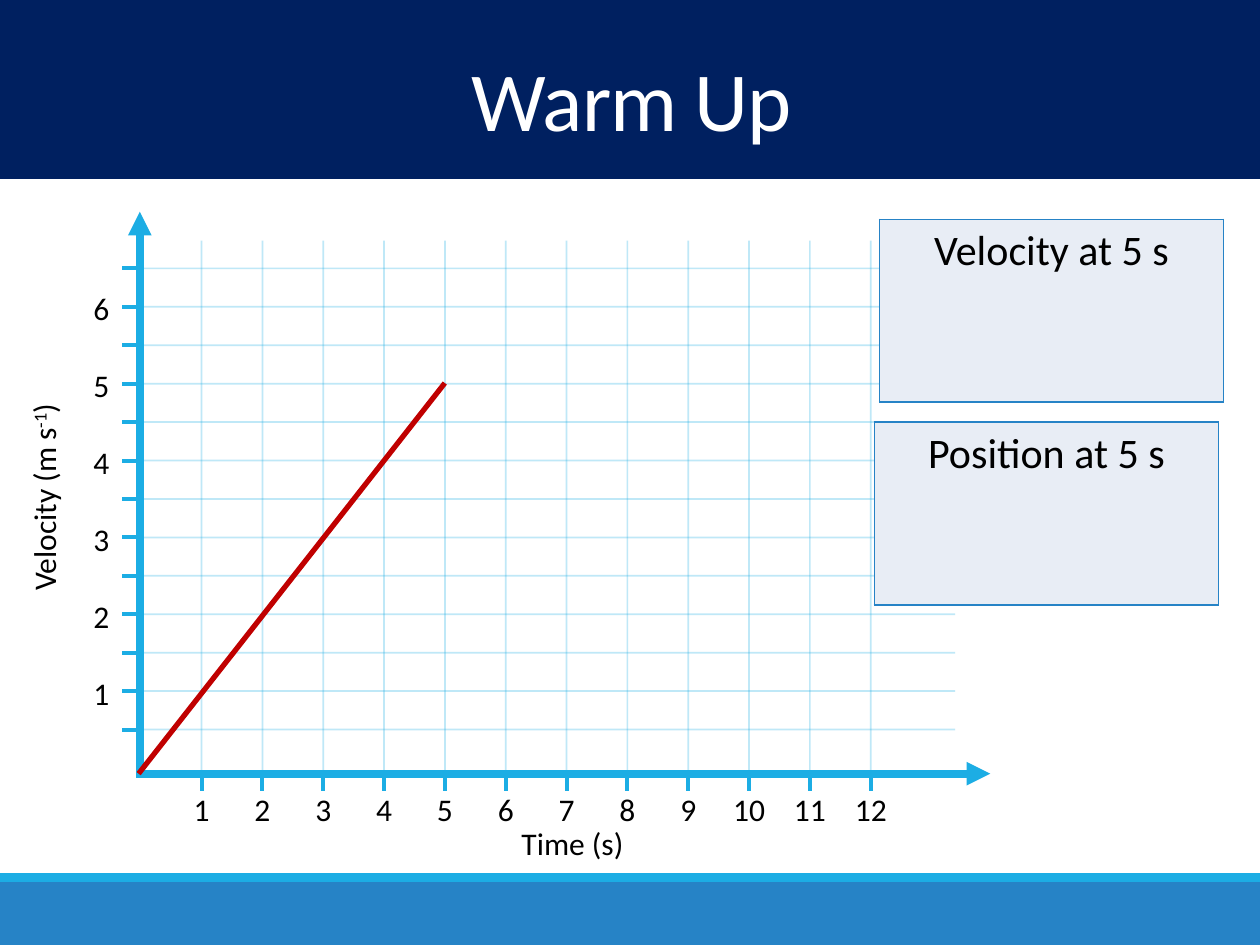
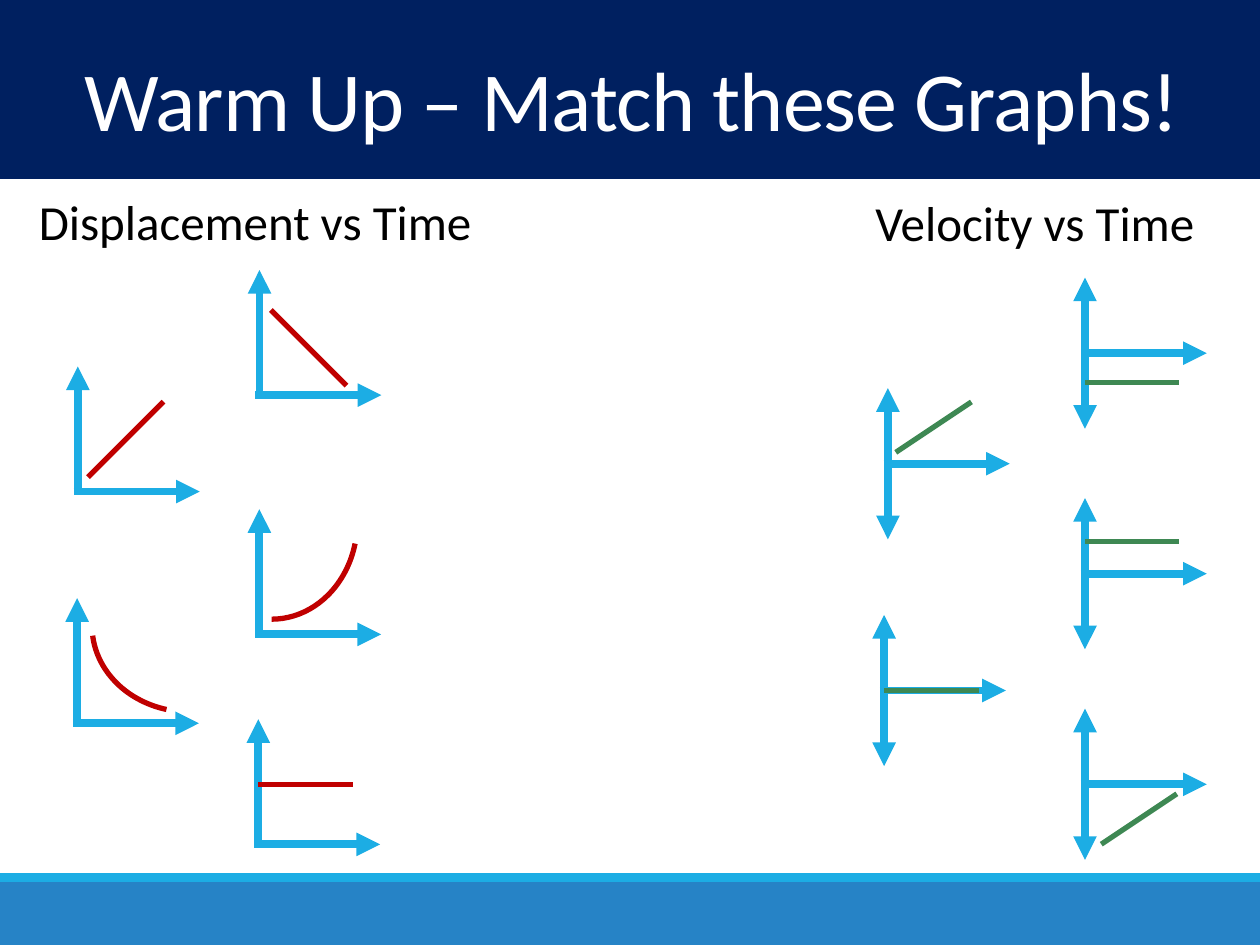
import pptx
import pptx.dml.color
import pptx.enum.shapes
import pptx.enum.text
import pptx.oxml.ns
import pptx.util
from lxml import etree

Pt = pptx.util.Pt
SHAPE = pptx.enum.shapes.MSO_SHAPE
ALIGN = pptx.enum.text.PP_ALIGN
ANCHOR = pptx.enum.text.MSO_ANCHOR
qn = pptx.oxml.ns.qn

NAVY, BLUE, SKY = "002060", "2683C6", "1CADE4"
RED, GREEN, PALE = "C00000", "3E8853", "E8EDF5"
BLACK, WHITE = "000000", "FFFFFF"
FONT = "Calibri"

ORIGIN_X, ORIGIN_Y = 79.9, 442.1
FIRST_SECOND_X, SECOND_STEP = 115.2, 34.76
FIRST_HALF_Y, HALF_STEP = 416.9, 21.96
SECONDS, HALF_METRES = 12, 13


def colour(hex_code):
    return pptx.dml.color.RGBColor.from_string(hex_code)


def add_run(paragraph, words, size, ink=BLACK):
    run = paragraph.add_run()
    run.text = words
    run.font.name = FONT
    run.font.size = Pt(size)
    run.font.color.rgb = colour(ink)
    return run


def add_label(slide, words, left, top, width, height, size=18, ink=BLACK,
              align=ALIGN.LEFT, wrap=True):
    label = slide.shapes.add_textbox(Pt(left), Pt(top), Pt(width), Pt(height))
    label.text_frame.word_wrap = wrap
    paragraph = label.text_frame.paragraphs[0]
    paragraph.alignment = align
    add_run(paragraph, words, size, ink)
    return label


def add_band(slide, top, height, fill):
    band = slide.shapes.add_shape(SHAPE.RECTANGLE, 0, Pt(top), Pt(720), Pt(height))
    band.shadow.inherit = False
    band.fill.solid()
    band.fill.fore_color.rgb = colour(fill)
    band.line.fill.background()


def add_line(slide, start, end, ink, weight, head=False, tail=False, alpha=None):
    line = slide.shapes.add_connector(
        pptx.enum.shapes.MSO_CONNECTOR.STRAIGHT, *map(Pt, start + end))
    line.line.color.rgb = colour(ink)
    line.line.width = Pt(weight)
    stroke = line.line._get_or_add_ln()
    if alpha:
        tint = stroke.find(".//" + qn("a:srgbClr"))
        etree.SubElement(tint, qn("a:alpha"), val=str(alpha * 1000))
    for end_name, wanted in (("a:headEnd", head), ("a:tailEnd", tail)):
        if wanted:
            etree.SubElement(stroke, qn(end_name), type="triangle")
    etree.SubElement(line._element.spPr, qn("a:effectLst"))


def add_axis(slide, start, end, both_ways=False):
    add_line(slide, start, end, SKY, 4.5, head=both_ways, tail=True)


def add_arc(slide, left, top, rotation, start, end):
    arc = slide.shapes.add_shape(SHAPE.ARC, Pt(left), Pt(top), Pt(111.6), Pt(97.9))
    arc.shadow.inherit = False
    arc.rotation = rotation
    arc.adjustments[0] = start
    arc.adjustments[1] = end
    arc.fill.background()
    arc.line.color.rgb = colour(RED)
    arc.line.width = Pt(3)


def add_answer_box(slide, question, left, top):
    frame = slide.shapes.add_table(1, 1, Pt(left), Pt(top), Pt(196.6), Pt(104.4))
    answer = frame.table.cell(0, 0)
    paragraph = answer.text_frame.paragraphs[0]
    paragraph.alignment = ALIGN.CENTER
    add_run(paragraph, question, 24)
    borders = answer._tc.get_or_add_tcPr()
    for side in ("a:lnL", "a:lnR", "a:lnT", "a:lnB"):
        border = etree.SubElement(borders, qn(side), w=str(Pt(1)))
        paint = etree.SubElement(border, qn("a:solidFill"))
        etree.SubElement(paint, qn("a:srgbClr"), val=BLUE)
    answer.fill.solid()
    answer.fill.fore_color.rgb = colour(PALE)


def add_titled_slide(deck, words):
    slide = deck.slides.add_slide(deck.slide_layouts[6])
    add_band(slide, 504, 36, BLUE)
    add_band(slide, 499, 5, SKY)
    add_band(slide, 0, 102.2, NAVY)
    title = add_label(slide, words, 2.2, 30.2, 717.8, 60.5, 48, WHITE, ALIGN.CENTER)
    title.text_frame.vertical_anchor = ANCHOR.MIDDLE
    paragraph = title.text_frame.paragraphs[0]
    paragraph.line_spacing = 0.85
    paragraph.runs[0].font._element.set("spc", "-50")
    return slide


def add_velocity_graph(slide):
    add_axis(slide, (ORIGIN_X, 442.8), (ORIGIN_X, 121))
    add_axis(slide, (77.8, ORIGIN_Y), (565.9, ORIGIN_Y))

    velocity = add_label(slide, "Velocity (m s", -72, 233.3, 193.7, 28.8)
    velocity.rotation = 270
    unit = velocity.text_frame.paragraphs[0]
    add_run(unit, "-1", 18).font._element.set("baseline", "30000")
    add_run(unit, ")", 18)
    add_label(slide, "Time (s)", 290.9, 467.3, 80.6, 28.8)

    for half in range(HALF_METRES):
        y = FIRST_HALF_Y - half * HALF_STEP
        add_line(slide, (ORIGIN_X, y), (69.8, y), SKY, 2.25)
        add_line(slide, (79.2, y), (545.8, y), SKY, 1, alpha=27)
        if half % 2:
            add_label(slide, str((half + 1) // 2), 46, y - 13.5, 23.8, 28.8,
                      align=ALIGN.CENTER, wrap=False)
    for second in range(1, SECONDS + 1):
        x = FIRST_SECOND_X + (second - 1) * SECOND_STEP
        add_line(slide, (x, 452), (x, 442.9), SKY, 2.25)
        add_line(slide, (x, 137.5), (x, ORIGIN_Y), SKY, 1, alpha=27)
        add_label(slide, str(second), x - 17.3, 447.7, 34.6, 28.8,
                  align=ALIGN.CENTER, wrap=False)


def add_motion(slide, corner, start, end, ink):
    x, y = corner
    add_line(slide, (x + start[0], y + start[1]), (x + end[0], y + end[1]), ink, 3)


def add_small_axes(slide, corner, both_ways):
    x, y = corner
    reach_down, reach_up = (43.2, 43.2) if both_ways else (0.5, 71.5)
    add_axis(slide, (x, y + reach_down), (x, y - reach_up), both_ways)
    add_axis(slide, (x - 2.4, y), (x + 69.6, y))


def build_warm_up(deck):
    slide = add_titled_slide(deck, "Warm Up")
    add_velocity_graph(slide)
    add_answer_box(slide, "Velocity at 5 s", 502.6, 125.3)
    add_line(slide, (79.2, ORIGIN_Y), (254.2, 218.9), RED, 3)
    add_answer_box(slide, "Position at 5 s", 499.7, 241.2)


def build_matching(deck):
    slide = add_titled_slide(deck, "Warm Up – Match these Graphs!")
    add_label(slide, "Displacement vs Time", 15.1, 105.8, 261.4, 41, 28, wrap=False)
    add_label(slide, "Velocity vs Time", 493.2, 106.6, 204.5, 41, 28)

    displacement_lines = [
        ((147.6, 482.5), (0, -34.2), (54, -34.2)),
        ((44.5, 280.9), (5.8, -8.2), (49, -51.4)),
        ((148.3, 225.8), (6.5, -48.6), (49.7, -5.4)),
    ]
    velocity_lines = [
        ((505.2, 394.6), (0, 0), (54, 0)),
        ((620, 327.8), (0, -18.2), (54, -18.2)),
        ((620, 201.8), (0, 17), (54, 17)),
        ((507.4, 265), (4.5, -6.5), (47.7, -35.3)),
        ((620, 448.2), (9.3, 34.2), (52.5, 5.4)),
    ]
    speeding_up, slowing_down = (148.2, 362.5), (44.1, 413.3)
    for corner in (speeding_up, slowing_down):
        add_small_axes(slide, corner, both_ways=False)
    for motions, ink, both_ways in ((displacement_lines, RED, False),
                                    (velocity_lines, GREEN, True)):
        for corner, start, end in motions:
            add_small_axes(slide, corner, both_ways)
            add_motion(slide, corner, start, end, ink)
    add_arc(slide, 99.4, 249.1, 90, 170.87, 0)
    add_arc(slide, 52.6, 308.9, 180, 171.37, 212.68)


def main():
    deck = pptx.Presentation()
    deck.slide_width, deck.slide_height = Pt(720), Pt(540)
    build_warm_up(deck)
    build_matching(deck)
    deck.save("out.pptx")


if __name__ == "__main__":
    main()
